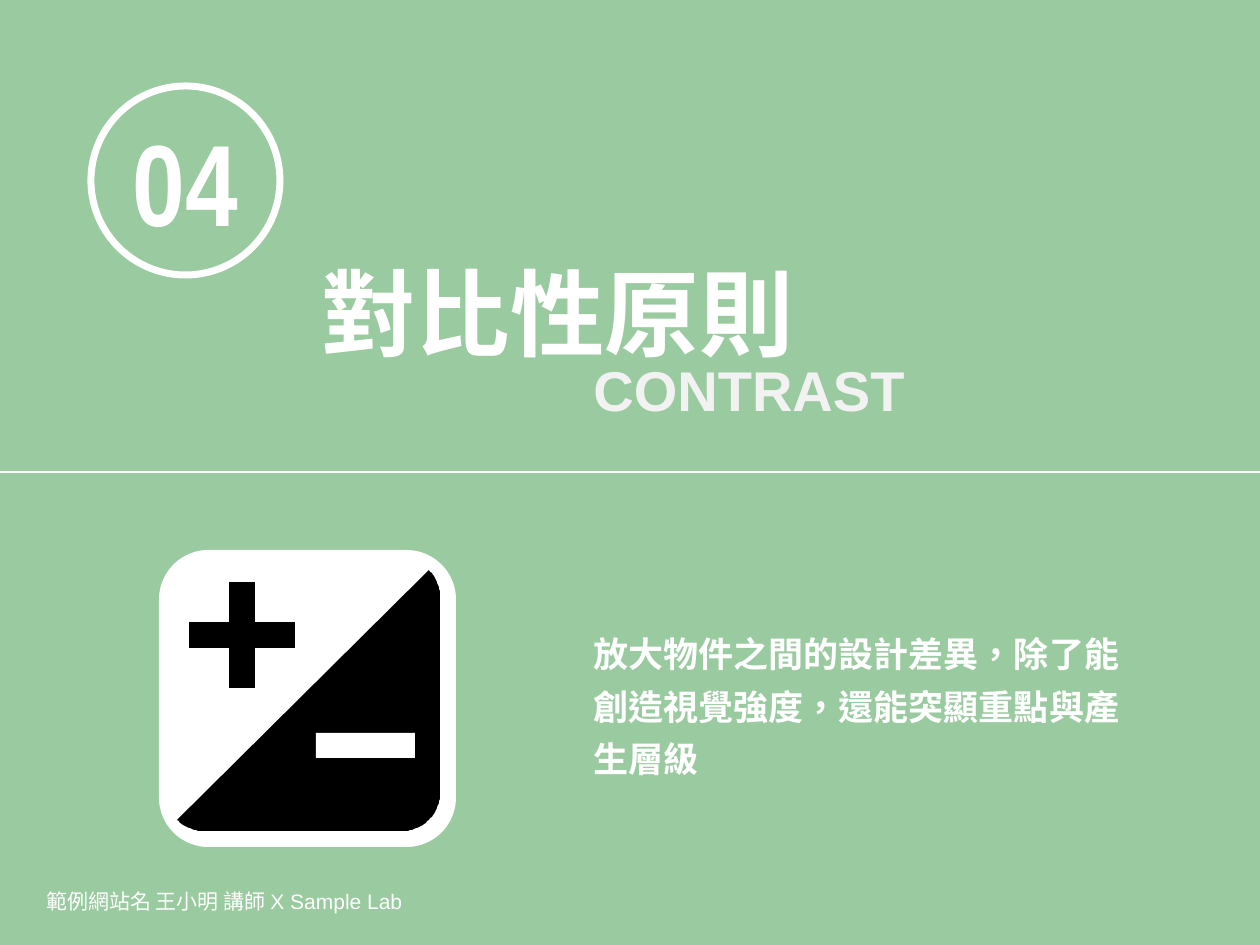
import math

import pptx
import pptx.dml.color
import pptx.enum.shapes
import pptx.enum.text
import pptx.oxml
import pptx.oxml.ns
import pptx.util

PX = 914400 // 126
SHAPE = pptx.enum.shapes.MSO_SHAPE
ALIGN = pptx.enum.text.PP_ALIGN
ANCHOR = pptx.enum.text.MSO_ANCHOR
GREEN, WHITE, PALE, BLACK = "9ACA9F", "FFFFFF", "F2F2F2", "000000"


def px(*lengths):
    return [pptx.util.Emu(length * PX) for length in lengths]


def paint(color_format, color):
    color_format.rgb = pptx.dml.color.RGBColor.from_string(color)


def fill(shape, color):
    shape.shadow.inherit = False
    shape.fill.solid()
    paint(shape.fill.fore_color, color)
    shape.line.fill.background()


def write(shape, text, size, color=WHITE, font="Arial", bold=True):
    shape.text_frame.text = text
    paragraph = shape.text_frame.paragraphs[0]
    for run in paragraph.runs:
        run.font.size = pptx.util.Pt(size)
        run.font.name = font
        run.font.bold = bold
        paint(run.font.color, color)
        run._r.get_or_add_rPr().set("lang", "zh-TW")
    return paragraph


def add_text(slide, box, text, size, **style):
    label = slide.shapes.add_textbox(*px(*box))
    label.text_frame.word_wrap = True
    write(label, text, size, **style)
    return label


def add_number(slide, left, top, size):
    ring = slide.shapes.add_shape(SHAPE.OVAL, *px(left, top, size, size))
    ring.shadow.inherit = False
    ring.fill.background()
    paint(ring.line.color, WHITE)
    ring.line.width = pptx.util.Pt(4)
    ring.text_frame.word_wrap = False
    ring.text_frame.vertical_anchor = ANCHOR.MIDDLE
    write(ring, "04", 66, font="Arial Narrow").alignment = ALIGN.CENTER


def add_heading(slide, left, top):
    add_text(slide, (left, top, 519, 127), "對比性原則", 54)
    add_text(slide, (left + 272, top + 100, 372, 81), "CONTRAST", 32, color=PALE)


def add_divider(slide, top, width):
    divider = slide.shapes.add_connector(
        pptx.enum.shapes.MSO_CONNECTOR.STRAIGHT, *px(0, top, width, top))
    paint(divider.line.color, WHITE)
    divider.line.width = pptx.util.Pt(1)
    divider._element.spPr.append(
        pptx.oxml.parse_xml("<a:effectLst %s/>" % pptx.oxml.ns.nsdecls("a")))


def arc(center_x, center_y, radius, start, end):
    return [(center_x + radius * math.cos(math.radians(angle)),
             center_y + radius * math.sin(math.radians(angle)))
            for angle in range(start, end + 1, 3)]


def add_contrast_icon(slide, left, top, size):
    tile = slide.shapes.add_shape(
        SHAPE.ROUNDED_RECTANGLE, *px(left, top, size, size))
    fill(tile, WHITE)

    radius = 38
    near, far = 45, size - 16 - radius
    corners = [(far, near + 2, -45, 0), (far, far, 0, 90), (near, far, 90, 135)]
    outline = [point for x, y, start, end in corners
               for point in arc(left + x, top + y, radius, start, end)]
    builder = slide.shapes.build_freeform(*outline[0], scale=PX)
    builder.add_line_segments(outline[1:], close=True)
    fill(builder.convert_to_shape(), BLACK)

    minus = slide.shapes.add_shape(
        SHAPE.RECTANGLE, *px(left + 157, top + 183, 99, 25))
    fill(minus, WHITE)
    plus = slide.shapes.add_shape(
        SHAPE.MATH_PLUS, *px(left + 11, top + 13, 144, 144))
    plus.adjustments[0] = 0.18
    fill(plus, BLACK)


def add_explanation(slide, box):
    explanation = add_text(
        slide, box,
        "放大物件之間的設計差異，除了能創造視覺強度，還能突顯重點與產生層級", 20)
    explanation.text_frame.paragraphs[0].line_spacing = pptx.util.Pt(30)


def add_credit(slide, box):
    credit = add_text(
        slide, box, "範例網站名 王小明 講師 X Sample Lab", 12, bold=False)
    credit.text_frame.vertical_anchor = ANCHOR.MIDDLE


def main():
    deck = pptx.Presentation()
    deck.slide_width, deck.slide_height = px(1260, 945)
    slide = deck.slides.add_slide(deck.slide_layouts[6])
    slide.background.fill.solid()
    paint(slide.background.fill.fore_color, GREEN)
    add_credit(slide, (34, 876, 596, 50))
    add_number(slide, 91, 86, 189)
    add_heading(slide, 309, 249)
    add_divider(slide, 472, 1260)
    add_contrast_icon(slide, 159, 550, 297)
    add_explanation(slide, (581, 616, 571, 171))
    deck.save("out.pptx")


if __name__ == "__main__":
    main()
